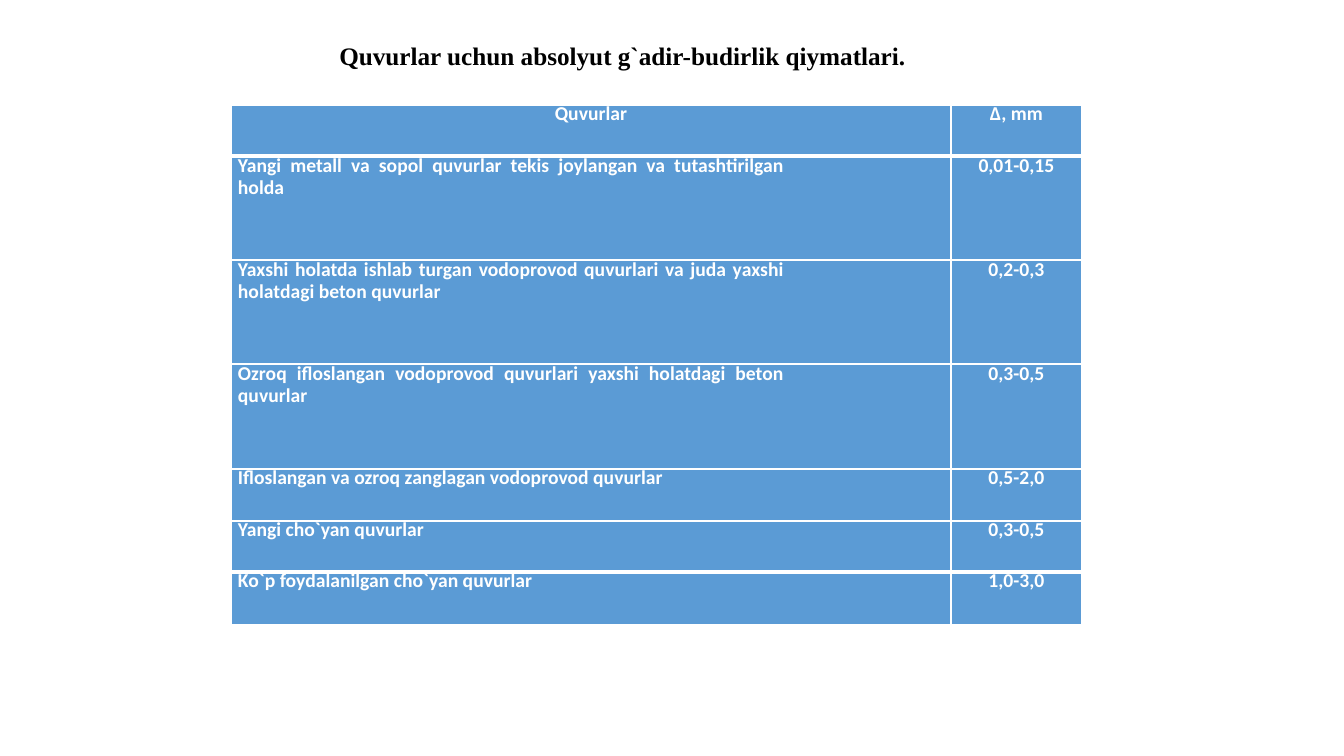
from lxml.etree import SubElement
from pptx import Presentation
from pptx.dml.color import RGBColor
from pptx.enum.text import MSO_ANCHOR, PP_ALIGN as Align
from pptx.oxml.ns import qn
from pptx.util import Pt

EMU_PER_PX = 914400 / 100.8
WHITE = RGBColor(0xFF, 0xFF, 0xFF)
BLACK = RGBColor(0, 0, 0)
BLUE = RGBColor(0x5B, 0x9B, 0xD5)

TITLE = "Quvurlar uсhun absolyut g`adir-budirlik qiymatlari."
COLUMN_WIDTHS = (720, 131)
PIPE_MARGINS = (7, 167)
ROWS = (
    (51, 14.9, "Quvurlar", "Δ, mm"),
    (104, 15.6, "Yangi metall va sopol quvurlar tekis joylangan va tutashtirilgan\vholda", "0,01-0,15"),
    (104, 15.8, "Yaxshi holatda ishlab turgan vodoprovod quvurlari va juda yaxshi\vholatdagi beton quvurlar", "0,2-0,3"),
    (105, 15.8, "Ozroq ifloslangan vodoprovod quvurlari yaxshi holatdagi beton\vquvurlar", "0,3-0,5"),
    (52, 15.1, "Ifloslangan va ozroq zanglagan vodoprovod quvurlar", "0,5-2,0"),
    (51, 15.1, "Yangi сho`yan quvurlar", "0,3-0,5"),
    (53, 15.2, "Ko`p foydalanilgan сho`yan quvurlar", "1,0-3,0"),
)


def px(length):
    """Turn pixels into EMU."""
    return round(length * EMU_PER_PX)


def write_text(frame, text, *, font, size, color, align=Align.CENTER, line_points=None):
    """Write one bold paragraph into a text frame."""
    paragraph = frame.paragraphs[0]
    paragraph.text = text
    paragraph.alignment = align
    if line_points:
        paragraph.line_spacing = Pt(line_points)
    for run in paragraph.runs:
        run.font.name = font
        run.font.size = Pt(size)
        run.font.bold = True
        run.font.color.rgb = color


def set_margins(holder, left=0, right=0, top=0, bottom=0):
    """Set the inner margins of a cell or text frame."""
    holder.margin_left, holder.margin_right = px(left), px(right)
    holder.margin_top, holder.margin_bottom = px(top), px(bottom)


def draw_borders(cell, top, bottom):
    """Draw white borders around a cell, with widths in points."""
    properties = cell._tc.get_or_add_tcPr()
    for side, width in (("L", 1), ("R", 1), ("T", top), ("B", bottom)):
        line = SubElement(properties, qn(f"a:ln{side}"), w=str(Pt(width)))
        fill = SubElement(line, qn("a:solidFill"))
        SubElement(fill, qn("a:srgbClr"), val=str(WHITE))


def add_title(slide, left, top, width, height):
    """Add the slide title in the given box."""
    box = slide.shapes.add_textbox(px(left), px(top), px(width), px(height))
    frame = box.text_frame
    frame.word_wrap = True
    set_margins(frame, left=7, top=7)
    write_text(frame, TITLE, font="Times New Roman", size=18, color=BLACK)


def add_roughness_table(slide, left, top):
    """Add the table of pipe roughness values at the given corner."""
    height = sum(row[0] for row in ROWS)
    table = slide.shapes.add_table(
        len(ROWS), len(COLUMN_WIDTHS), px(left), px(top), px(sum(COLUMN_WIDTHS)), px(height)
    ).table
    for column, width in zip(table.columns, COLUMN_WIDTHS):
        column.width = px(width)
    last = len(ROWS) - 1
    for row_index, (row_height, line_points, *texts) in enumerate(ROWS):
        table.rows[row_index].height = px(row_height)
        for column_index, text in enumerate(texts):
            cell = table.cell(row_index, column_index)
            is_pipe = row_index > 0 and column_index == 0
            set_margins(cell, *(PIPE_MARGINS if is_pipe else ()))
            cell.vertical_anchor = MSO_ANCHOR.TOP
            draw_borders(
                cell,
                top=3 if row_index in (1, last) else 1,
                bottom=3 if row_index in (0, last - 1) else 1,
            )
            cell.fill.solid()
            cell.fill.fore_color.rgb = BLUE
            write_text(
                cell.text_frame, text, font="Calibri", size=14, color=WHITE,
                align=Align.JUSTIFY if is_pipe else Align.CENTER, line_points=line_points,
            )


def main():
    """Build the slide and save it."""
    presentation = Presentation()
    presentation.slide_width, presentation.slide_height = px(1344), px(756)
    slide = presentation.slides.add_slide(presentation.slide_layouts[6])
    add_roughness_table(slide, 231, 105)
    add_title(slide, 320, 33, 598, 40)
    presentation.save("out.pptx")


if __name__ == "__main__":
    main()
